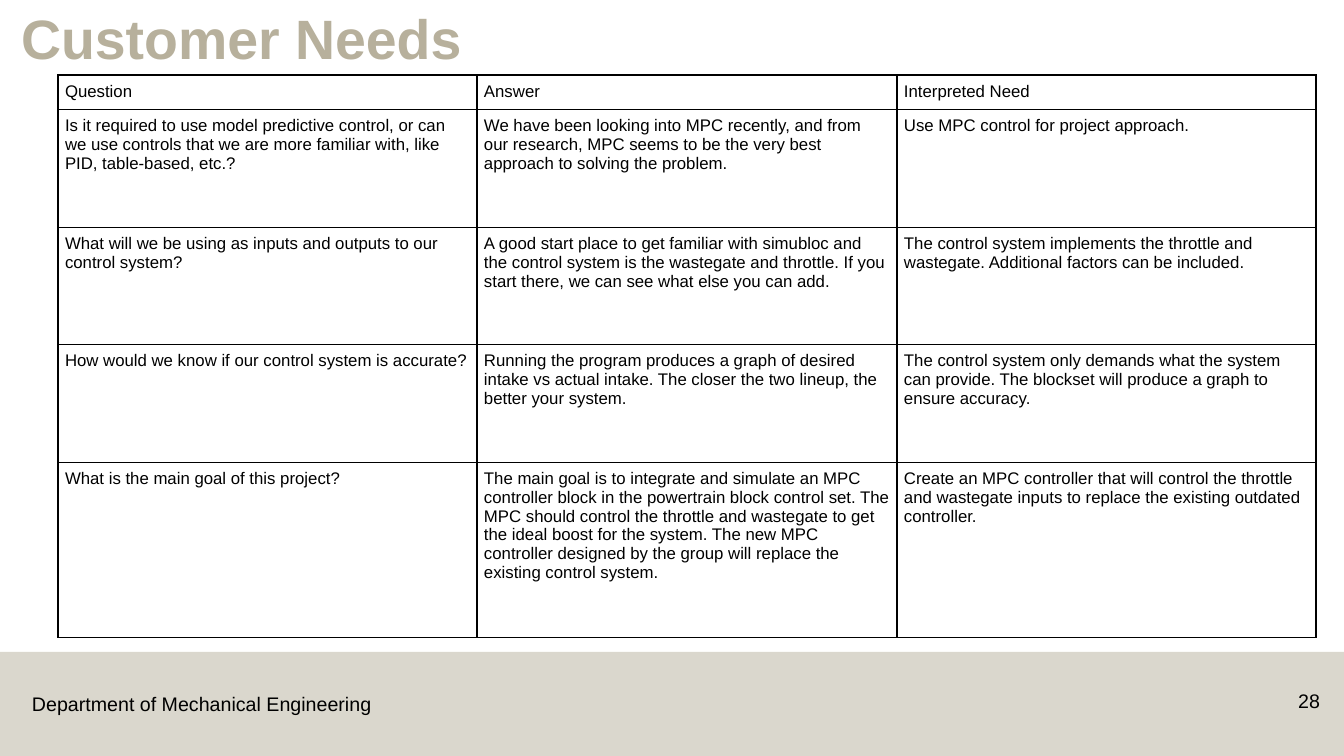
from lxml.etree import SubElement
from pptx import Presentation
from pptx.dml.color import RGBColor
from pptx.enum.shapes import MSO_SHAPE
from pptx.enum.text import MSO_ANCHOR, MSO_AUTO_SIZE, PP_ALIGN
from pptx.oxml.ns import qn
from pptx.util import Pt

PX = 914400 / 100.8
WIDE, HIGH = 1344, 756
BLACK = RGBColor(0x00, 0x00, 0x00)
SAND = RGBColor(0xB7, 0xB0, 0x9C)
FONT = "Arial"

COLS = [419, 420, 419]
ROWS = [34, 118, 117, 118, 175]
NEEDS = [
    ("Question", "Answer", "Interpreted Need"),
    ("Is it required to use model predictive control, or can we use controls "
     "that we are more familiar with, like PID, table-based, etc.?",
     "We have been looking into MPC recently, and from our research, MPC seems "
     "to be the very best approach to solving the problem.",
     "Use MPC control for project approach."),
    ("What will we be using as inputs and outputs to our control system?",
     "A good start place to get familiar with simubloc and the control system "
     "is the wastegate and throttle. If you start there, we can see what else "
     "you can add.",
     "The control system implements the throttle and wastegate. Additional "
     "factors can be included."),
    ("How would we know if our control system is accurate?",
     "Running the program produces a graph of desired intake vs actual intake. "
     "The closer the two lineup, the better your system.",
     "The control system only demands what the system can provide. The blockset "
     "will produce a graph to ensure accuracy."),
    ("What is the main goal of this project?",
     "The main goal is to integrate and simulate an MPC controller block in the "
     "powertrain block control set. The MPC should control the throttle and "
     "wastegate to get the ideal boost for the system. The new MPC controller "
     "designed by the group will replace the existing control system.",
     "Create an MPC controller that will control the throttle and wastegate "
     "inputs to replace the existing outdated controller."),
]


def px(n):
    return round(n * PX)


def write(frame, text, size, color=BLACK, bold=False, align=PP_ALIGN.LEFT):
    para = frame.paragraphs[0]
    para.alignment = align
    run = para.add_run()
    run.text = text
    font = run.font
    font.name, font.size, font.bold = FONT, Pt(size), bold
    font.color.rgb = color
    return para


def add_title(slide, x, y, w, h):
    title = slide.shapes.title
    title.left, title.top, title.width, title.height = map(px, (x, y, w, h))
    frame = title.text_frame
    frame.auto_size = MSO_AUTO_SIZE.NONE
    frame.vertical_anchor = MSO_ANCHOR.MIDDLE
    para = write(frame, "Customer Needs", 39.6, SAND, bold=True)
    para.line_spacing = 0.9


def add_label(slide, x, y, w, h, text, align=PP_ALIGN.LEFT):
    box = slide.shapes.add_textbox(px(x), px(y), px(w), px(h))
    box.text_frame.word_wrap = True
    write(box.text_frame, text, 14, align=align)


def add_footer(slide, x, y, w, h):
    # Half-transparent band
    band = slide.shapes.add_shape(MSO_SHAPE.RECTANGLE, px(x), px(y), px(w), px(h))
    band.shadow.inherit = False
    band.line.fill.background()
    band.fill.solid()
    band.fill.fore_color.rgb = SAND
    tint = next(band.fill._xPr.iter(qn("a:srgbClr")))
    SubElement(tint, qn("a:alpha"), val="50000")

    # Department and page number
    add_label(slide, x + 22, y + 35, 370, 34, "Department of Mechanical Engineering")
    add_label(slide, x + w - 92, y + 32, 78, 40, "28", PP_ALIGN.RIGHT)


def add_edges(cell):
    props = cell._tc.get_or_add_tcPr()
    for side in ("lnL", "lnR", "lnT", "lnB"):
        line = SubElement(props, qn(f"a:{side}"), w=str(Pt(1)))
        fill = SubElement(line, qn("a:solidFill"))
        SubElement(fill, qn("a:srgbClr"), val=str(BLACK))


def add_needs(slide, x, y):
    table = slide.shapes.add_table(
        len(ROWS), len(COLS), px(x), px(y), px(sum(COLS)), px(sum(ROWS))).table
    table.first_row = table.horz_banding = False
    for col, w in zip(table.columns, COLS):
        col.width = px(w)
    for row, h, texts in zip(table.rows, ROWS, NEEDS):
        row.height = px(h)
        for cell, text in zip(row.cells, texts):
            cell.margin_left = cell.margin_right = px(7)
            cell.margin_top = cell.margin_bottom = px(7)
            add_edges(cell)
            cell.fill.background()
            write(cell.text_frame, text, 12)


def main():
    deck = Presentation()
    deck.slide_width, deck.slide_height = px(WIDE), px(HIGH)
    slide = deck.slides.add_slide(deck.slide_layouts[5])
    add_footer(slide, 0, 652, WIDE, 104)
    add_title(slide, 11, 6, 550, 72)
    add_needs(slide, 58, 75)
    deck.save("out.pptx")


if __name__ == "__main__":
    main()
